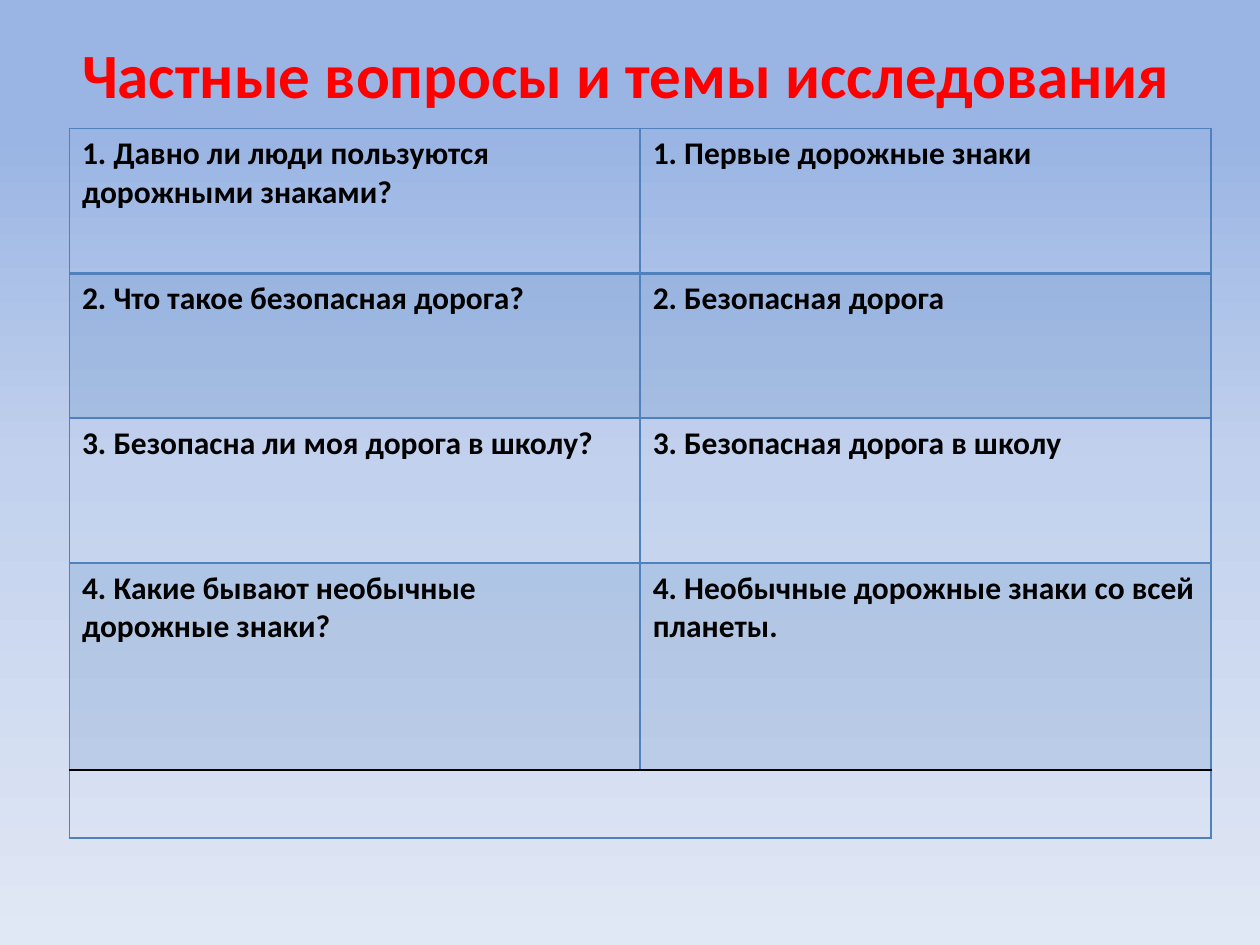
import pptx
import pptx.dml.color
import pptx.enum.text
import pptx.oxml.ns
import pptx.util
from lxml import etree

Cm = pptx.util.Cm
qn = pptx.oxml.ns.qn
HUES = {"title": "FF0000", "text": "000000", "line": "4F81BD", "rule": "000000",
        "top": "9AB5E4", "mid": "C2D1ED", "low": "E1E8F5"}
ROWS = [
    ("1. Давно ли люди пользуются дорожными знаками?", "1. Первые дорожные знаки"),
    ("2. Что такое безопасная дорога?", "2. Безопасная дорога"),
    ("3. Безопасна ли моя дорога в школу?", "3. Безопасная дорога в школу"),
    ("4. Какие бывают необычные дорожные знаки?",
     "4. Необычные дорожные знаки со всей планеты."),
]
HEIGHTS = [2.92, 2.92, 2.92, 4.17, 1.37]


def add(node, tag, **attrs):
    """Append a drawing element and return it."""
    return etree.SubElement(node, qn(tag), attrs)


def write(frame, text, size=18, hue="text", bold=True, font="Calibri"):
    """Put one formatted, left-aligned paragraph into a text frame."""
    para = frame.paragraphs[0]
    para.alignment = pptx.enum.text.PP_ALIGN.LEFT
    run = para.add_run()
    run.text = text
    run.font.size = pptx.util.Pt(size)
    run.font.name = font
    run.font.bold = bold
    run.font.color.rgb = pptx.dml.color.RGBColor.from_string(HUES[hue])


def paint(slide):
    """Fill the background with a vertical three-stop gradient."""
    fill = slide.background.fill
    fill.gradient()
    fill.gradient_angle = 270
    stops = slide.element.find(".//" + qn("a:gsLst"))
    stops.clear()
    for pos, hue in ((0.14, "top"), (0.5, "mid"), (1, "low")):
        stop = add(stops, "a:gs", pos=str(round(pos * 100000)))
        add(stop, "a:srgbClr", val=HUES[hue])


def head(slide, left, top, width, height):
    """Place and format the title."""
    title = slide.shapes.title
    title.left, title.top = Cm(left), Cm(top)
    title.width, title.height = Cm(width), Cm(height)
    frame = title.text_frame
    frame.word_wrap = True
    frame.vertical_anchor = pptx.enum.text.MSO_ANCHOR.TOP
    write(frame, "Частные вопросы и темы исследования", size=36, hue="title")


def edge(cell, sides):
    """Draw cell borders from (side, hue, points) triples."""
    props = cell._tc.get_or_add_tcPr()
    for spot, (side, hue, width) in enumerate(sides):
        line = add(props, "a:ln" + side, w=str(pptx.util.Pt(width)))
        add(add(line, "a:solidFill"), "a:srgbClr", val=HUES[hue])
        props.insert(spot, line)


def tint(cell, shade):
    """Give a cell a translucent fill or none."""
    if not shade:
        cell.fill.background()
        return
    cell.fill.solid()
    cell.fill.fore_color.rgb = pptx.dml.color.RGBColor.from_string(HUES["line"])
    color = cell._tc.tcPr.find(qn("a:solidFill") + "/" + qn("a:srgbClr"))
    add(color, "a:alpha", val="20000")


def grid(slide, left, top, width):
    """Build the table of questions and topics."""
    last = len(ROWS)
    table = slide.shapes.add_table(last + 1, 2, Cm(left), Cm(top), Cm(width),
                                   Cm(sum(HEIGHTS))).table
    table.first_row = table.horz_banding = False
    for row, height in zip(table.rows, HEIGHTS):
        row.height = Cm(height)
    rules = [("line", 1), ("line", 2), ("line", 1), ("line", 1), ("rule", 1), ("line", 1)]
    for r in range(last + 1):
        for c in range(2):
            cell = table.cell(r, c)
            tint(cell, r % 2)
            edge(cell, [("L", "line", 1), ("R", "line", 1),
                        ("T", *rules[r]), ("B", *rules[r + 1])])
            if r < last:
                write(cell.text_frame, ROWS[r][c])
    table.cell(last, 0).merge(table.cell(last, 1))


def main():
    """Create the deck and save it."""
    deck = pptx.Presentation()
    deck.slide_width, deck.slide_height = Cm(25.4), Cm(19.05)
    slide = deck.slides.add_slide(deck.slide_layouts[5])
    paint(slide)
    head(slide, 1.4, 0.58, 23.2, 1.8)
    grid(slide, 1.4, 2.59, 23.01)
    deck.save("out.pptx")


if __name__ == "__main__":
    main()
